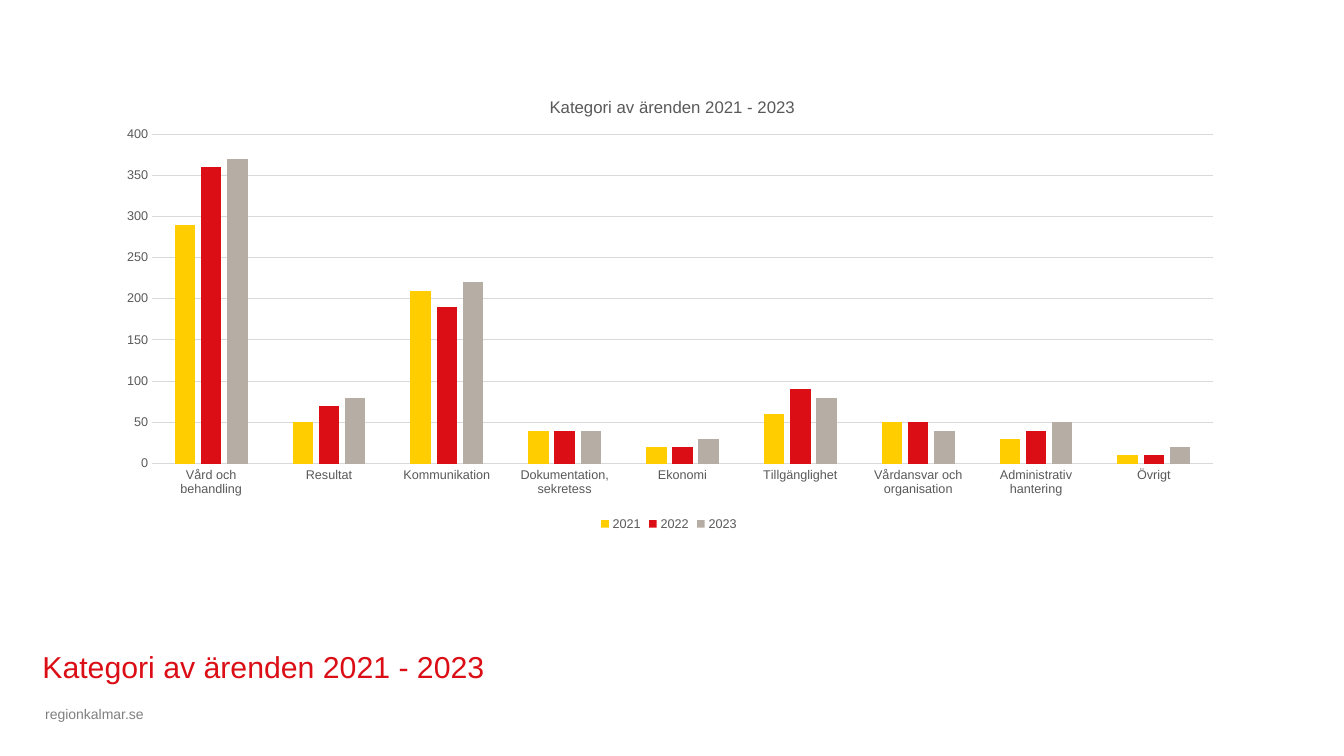
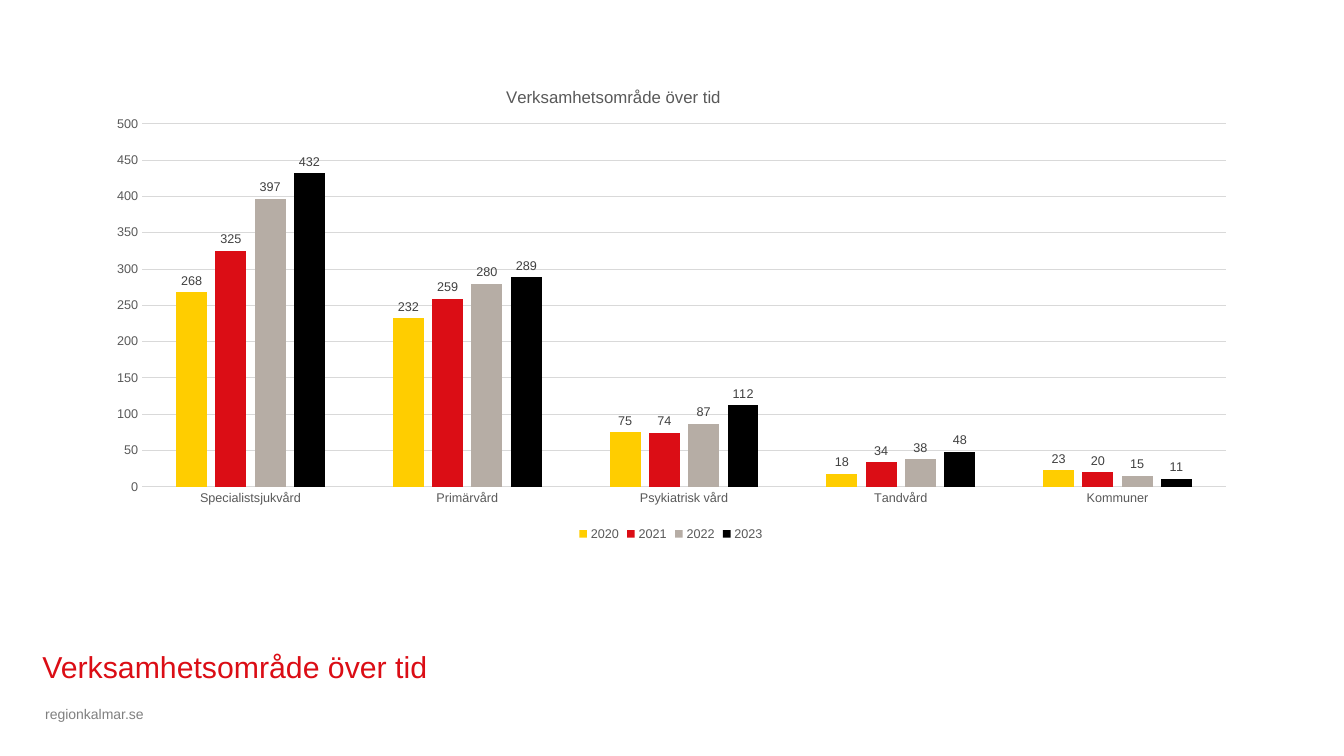
from lxml import etree
from pptx import Presentation
from pptx.chart.data import CategoryChartData
from pptx.dml.color import RGBColor
from pptx.enum import chart as ch, text as tx
from pptx.oxml.ns import qn
from pptx.util import Inches, Pt

# Shared style
FONT = "Arial"
YELLOW, RED, STONE, BLACK = "FFCD00", "DB0D15", "B6ADA5", "000000"
AXIS_TEXT, LABEL_TEXT, FOOTER_TEXT, GRID = "595959", "404040", "808080", "D9D9D9"
TITLE_ONLY = 5


def rgb(hex_color):
    return RGBColor.from_string(hex_color)


def style_font(font, size, color):
    font.name, font.size, font.bold = FONT, Pt(size), False
    font.color.rgb = rgb(color)


def style_line(line, color):
    line.color.rgb = rgb(color)
    line.width = Pt(0.75)


def add_page(prs, heading):
    """Add a slide with the shared title and footer."""
    slide = prs.slides.add_slide(prs.slide_layouts[TITLE_ONLY])
    title = slide.shapes.title
    title.left, title.top = Inches(0.32), Inches(6.42)
    title.width, title.height = Inches(10.41), Inches(0.53)
    frame = title.text_frame
    frame.text = heading
    frame.auto_size = tx.MSO_AUTO_SIZE.NONE
    frame.vertical_anchor = tx.MSO_ANCHOR.TOP
    paragraph = frame.paragraphs[0]
    paragraph.alignment = tx.PP_ALIGN.LEFT
    paragraph.line_spacing = 0.9
    style_font(paragraph.font, 21.6, RED)

    footer = slide.shapes.add_textbox(Inches(0.35), Inches(6.95), Inches(1.2), Inches(0.27))
    footer.text_frame.word_wrap = False
    footer.text_frame.text = "regionkalmar.se"
    style_font(footer.text_frame.paragraphs[0].font, 10, FOOTER_TEXT)
    return slide


def place(part, index, frame, left, top, size=None):
    """Fix a chart part at a slide position in inches, within the chart frame."""
    for old in part.findall(qn("c:layout")):
        part.remove(old)
    x, y, width, height = frame
    values = {"xMode": "edge", "yMode": "edge",
              "x": (left - x) / width, "y": (top - y) / height}
    if size:
        values = {"layoutTarget": "inner", **values,
                  "w": size[0] / width, "h": size[1] / height}
    layout = etree.Element(qn("c:layout"))
    manual = etree.SubElement(layout, qn("c:manualLayout"))
    for tag, value in values.items():
        etree.SubElement(manual, qn("c:" + tag)).set("val", str(value))
    part.insert(index, layout)


def add_columns(slide, heading, frame, heading_at, plot_box, categories, series, labels=False):
    """Add a clustered column chart; series holds (name, colour, values)."""
    data = CategoryChartData()
    data.categories = categories
    for name, _, values in series:
        data.add_series(name, values)
    chart = slide.shapes.add_chart(
        ch.XL_CHART_TYPE.COLUMN_CLUSTERED, *map(Inches, frame), data).chart
    style_font(chart.font, 10, BLACK)

    # Heading and plot area
    chart.has_title = True
    chart.chart_title.text_frame.text = heading
    style_font(chart.chart_title.text_frame.paragraphs[0].font, 12, AXIS_TEXT)
    place(chart.chart_title._element, 1, frame, *heading_at)
    left, top, *size = plot_box
    place(chart._chartSpace.chart.plotArea, 0, frame, left, top, size)

    # Legend
    chart.has_legend = True
    chart.legend.position = ch.XL_LEGEND_POSITION.BOTTOM
    chart.legend.include_in_layout = False
    style_font(chart.legend.font, 9, AXIS_TEXT)

    # Axes
    for axis in (chart.category_axis, chart.value_axis):
        axis.major_tick_mark = axis.minor_tick_mark = ch.XL_TICK_MARK.NONE
        style_font(axis.tick_labels.font, 9, AXIS_TEXT)
    style_line(chart.category_axis.format.line, GRID)
    chart.value_axis.format.line.fill.background()
    chart.value_axis.minimum_scale = 0
    chart.value_axis.major_unit = 50
    style_line(chart.value_axis.major_gridlines.format.line, GRID)

    # Columns
    plot = chart.plots[0]
    plot.gap_width, plot.overlap, plot.vary_by_categories = 219, -27, False
    for columns, (_, color, _) in zip(plot.series, series):
        columns.format.fill.solid()
        columns.format.fill.fore_color.rgb = rgb(color)
        if labels:
            columns.data_labels.show_value = True
            columns.data_labels.position = ch.XL_LABEL_POSITION.OUTSIDE_END
            style_font(columns.data_labels.font, 9, LABEL_TEXT)


def main():
    prs = Presentation()
    prs.slide_width, prs.slide_height = Inches(13.33), Inches(7.5)

    # Cases by category
    heading = "Kategori av ärenden 2021 - 2023"
    add_columns(
        add_page(prs, heading), heading,
        frame=(1.03, 0.74, 11.21, 4.57), heading_at=(5.42, 0.93),
        plot_box=(1.51, 1.33, 10.52, 3.27),
        categories=["Vård och behandling", "Resultat", "Kommunikation",
                    "Dokumentation, sekretess", "Ekonomi", "Tillgänglighet",
                    "Vårdansvar och organisation", "Administrativ hantering", "Övrigt"],
        series=[("2021", YELLOW, (290, 50, 210, 40, 20, 60, 50, 30, 10)),
                ("2022", RED, (360, 70, 190, 40, 20, 90, 50, 40, 10)),
                ("2023", STONE, (370, 80, 220, 40, 30, 80, 40, 50, 20))])

    # Fields of activity over time
    heading = "Verksamhetsområde över tid"
    add_columns(
        add_page(prs, heading), heading,
        frame=(0.93, 0.64, 11.45, 4.77), heading_at=(4.99, 0.83),
        plot_box=(1.41, 1.23, 10.75, 3.6),
        categories=["Specialistsjukvård", "Primärvård", "Psykiatrisk vård",
                    "Tandvård", "Kommuner"],
        series=[("2020", YELLOW, (268, 232, 75, 18, 23)),
                ("2021", RED, (325, 259, 74, 34, 20)),
                ("2022", STONE, (397, 280, 87, 38, 15)),
                ("2023", BLACK, (432, 289, 112, 48, 11))],
        labels=True)

    prs.save("out.pptx")


if __name__ == "__main__":
    main()
